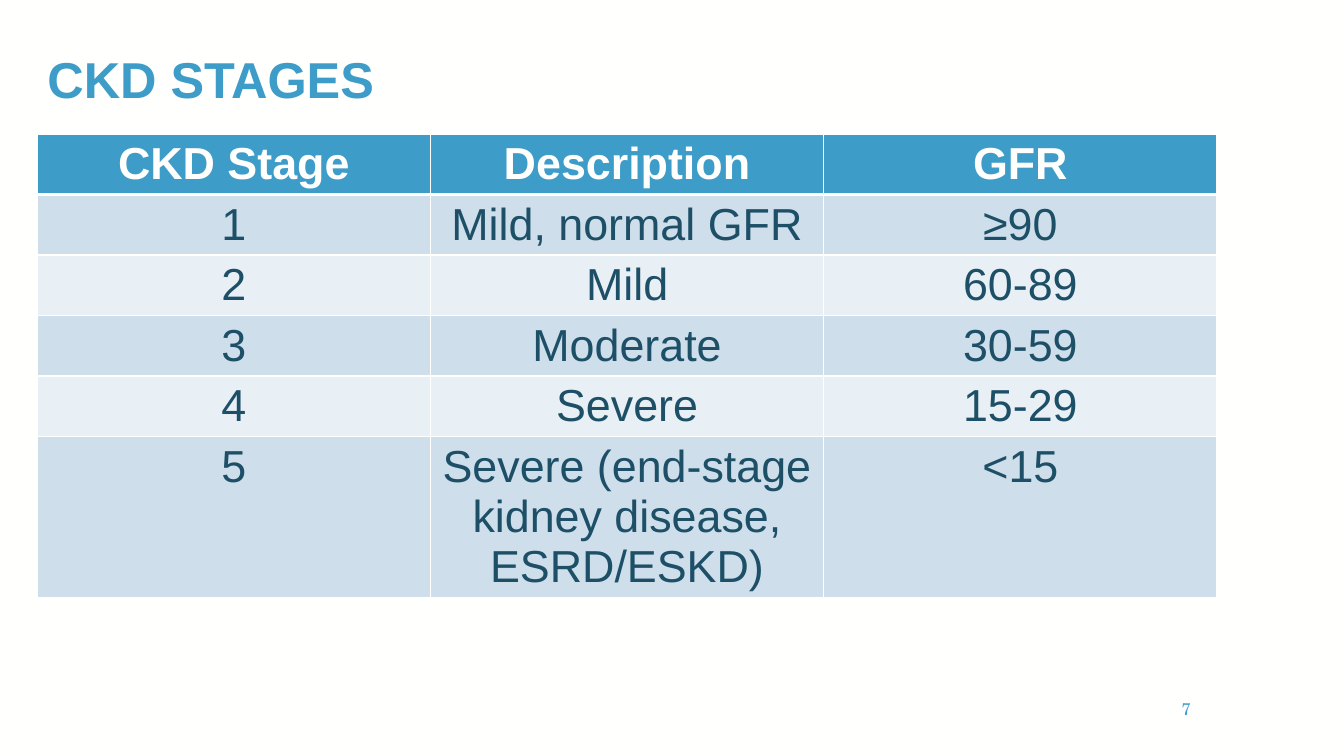
"""Build a slide with a table of CKD stages."""
from lxml import etree
from pptx import Presentation
from pptx.dml.color import RGBColor
from pptx.enum.text import MSO_ANCHOR, PP_ALIGN
from pptx.oxml.ns import qn
from pptx.util import Inches, Pt

CENTER, RIGHT = PP_ALIGN.CENTER, PP_ALIGN.RIGHT
MIDDLE = MSO_ANCHOR.MIDDLE
TITLE_ONLY = 5
COLORS = {
    "background": "FFFFFE",
    "accent": "3E9CC9",
    "text": "1D4F67",
    "odd_row": "CEDEEB",
    "even_row": "E8EFF5",
}
STAGES = [
    ("CKD Stage", "Description", "GFR"),
    ("1", "Mild, normal GFR", "≥90"),
    ("2", "Mild", "60-89"),
    ("3", "Moderate", "30-59"),
    ("4", "Severe", "15-29"),
    ("5", "Severe (end-stage kidney disease, ESRD/ESKD)", "<15"),
]
ROW_HEIGHTS = [0.6] * 5 + [1.59]
LEFT, TABLE_TOP, WIDTH = 0.37, 1.33, 11.7


def style_text(paragraph, size, color, font_name="Arial", bold=False):
    for run in paragraph.runs:
        run.font.name = font_name
        run.font.size = Pt(size)
        run.font.bold = bold
        run.font.color.rgb = RGBColor.from_string(COLORS[color])


def add_borders(cell, bottom_width):
    properties = cell._tc.get_or_add_tcPr()
    for side in ("L", "R", "T", "B"):
        width = bottom_width if side == "B" else 1
        line = etree.SubElement(properties, qn(f"a:ln{side}"), w=str(Pt(width)))
        fill = etree.SubElement(line, qn("a:solidFill"))
        etree.SubElement(fill, qn("a:srgbClr"), val=COLORS["background"])


presentation = Presentation()
presentation.slide_width = Inches(13.33)
presentation.slide_height = Inches(7.5)
slide = presentation.slides.add_slide(presentation.slide_layouts[TITLE_ONLY])
slide.background.fill.solid()
slide.background.fill.fore_color.rgb = RGBColor.from_string(COLORS["background"])

title = slide.shapes.title
title.left, title.top = Inches(LEFT), Inches(0.3)
title.width, title.height = Inches(WIDTH), Inches(1.03)
title.text_frame.text = "CKD STAGES"
title.text_frame.vertical_anchor = MIDDLE
title_paragraph = title.text_frame.paragraphs[0]
title_paragraph.alignment = PP_ALIGN.LEFT
title_paragraph.line_spacing = 0.9
style_text(title_paragraph, 36, "accent", bold=True)

table = slide.shapes.add_table(
    len(STAGES), len(STAGES[0]),
    Inches(LEFT), Inches(TABLE_TOP), Inches(WIDTH), Inches(sum(ROW_HEIGHTS)),
).table
for row_index, stage in enumerate(STAGES):
    table.rows[row_index].height = Inches(ROW_HEIGHTS[row_index])
    is_header = row_index == 0
    if is_header:
        fill_color = "accent"
    else:
        fill_color = "odd_row" if row_index % 2 else "even_row"
    for column_index, value in enumerate(stage):
        cell = table.cell(row_index, column_index)
        add_borders(cell, 3 if is_header else 1)
        cell.fill.solid()
        cell.fill.fore_color.rgb = RGBColor.from_string(COLORS[fill_color])
        cell.text_frame.text = value
        paragraph = cell.text_frame.paragraphs[0]
        paragraph.alignment = CENTER
        style_text(paragraph, 32, "background" if is_header else "text", bold=is_header)

number_box = slide.shapes.add_textbox(Inches(11.46), Inches(6.83), Inches(0.45), Inches(0.4))
number_box.text_frame.word_wrap = True
number_box.text_frame.vertical_anchor = MIDDLE
number_box.text_frame.text = "7"
number_paragraph = number_box.text_frame.paragraphs[0]
number_paragraph.alignment = RIGHT
style_text(number_paragraph, 12, "accent", font_name="TeX Gyre Schola")

presentation.save("out.pptx")
